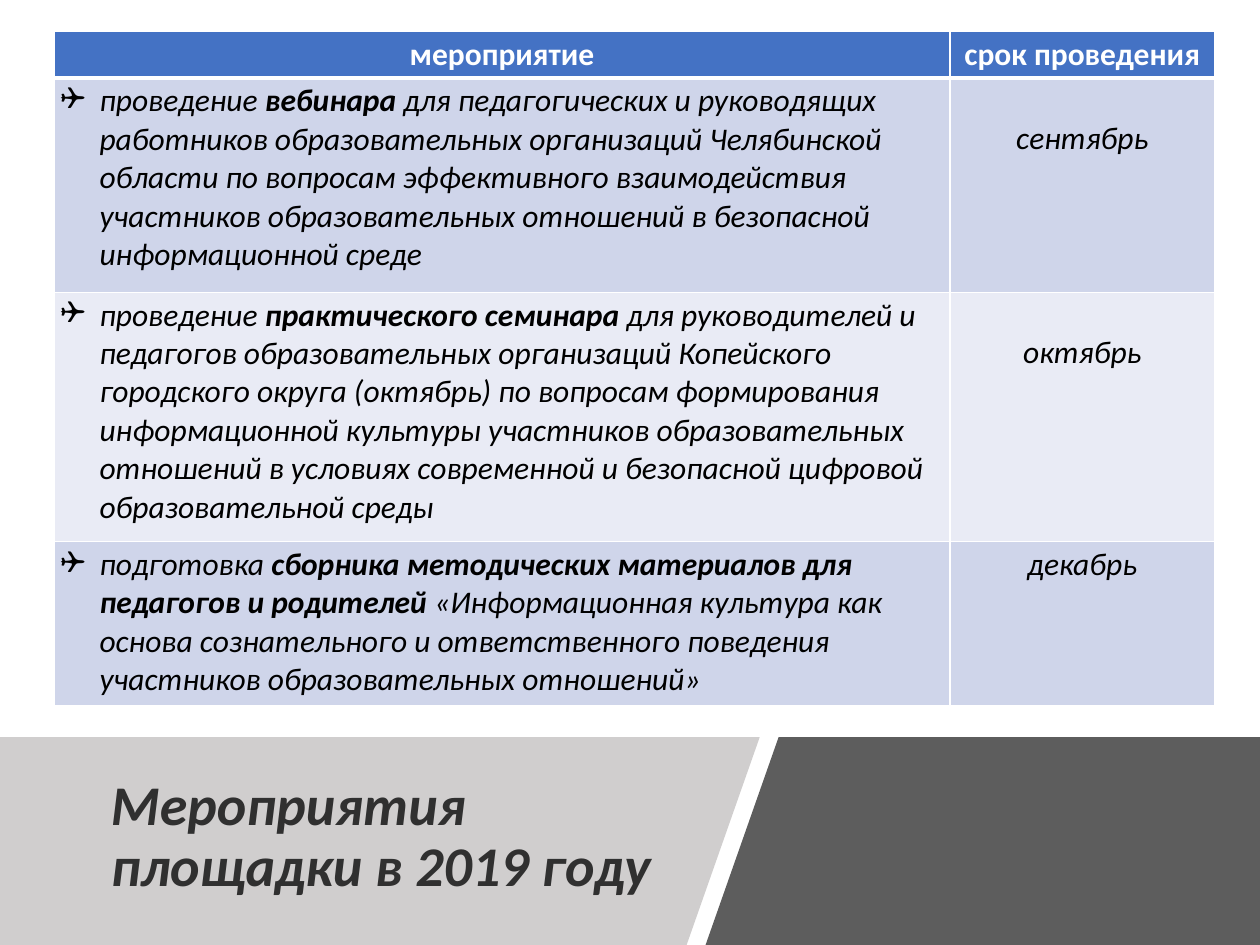
from lxml import etree
from pptx import Presentation, util as u
from pptx.dml.color import RGBColor
from pptx.enum import text
from pptx.oxml.ns import qn

HEADING = "Мероприятия площадки в 2019 году"
COLUMNS = ["мероприятие", "срок проведения"]
EVENTS = [
    (["проведение ", "вебинара",
      " для педагогических и руководящих работников образовательных организаций "
      "Челябинской области по вопросам эффективного взаимодействия участников "
      "образовательных отношений в безопасной информационной среде"],
     "сентябрь", 1),
    (["проведение ", "практического семинара",
      " для руководителей и педагогов образовательных организаций Копейского "
      "городского округа (октябрь) по вопросам формирования информационной культуры "
      "участников образовательных отношений в условиях современной и безопасной "
      "цифровой образовательной среды"],
     "октябрь", 1),
    (["подготовка ", "сборника методических материалов для педагогов и родителей ",
      "«Информационная культура как основа сознательного и ответственного поведения "
      "участников образовательных отношений»"],
     "декабрь", 0),
]
COLUMN_WIDTHS = [7.11, 2.1]
ROW_HEIGHTS = [0.37, 1.7, 1.98, 1.3]
TABLE_LEFT, TABLE_TOP = 0.43, 0.25
LINE_HEIGHT, BULLET_INDENT = 0.3, 0.31
BAND_TOP, BAND_BOTTOM = 5.85, 7.5

THEME = {
    "font": "Calibri", "heading_size": 32, "table_size": 18,
    "heading": "303030", "header": "4472C4", "bands": ["CFD5EA", "E9EBF5"],
    "ink": "000000", "white": "FFFFFF", "left_panel": "D0CECE", "right_panel": "5D5D5D",
}
PANELS = [
    ("right_panel", [(6.18, BAND_TOP), (10, BAND_TOP), (10, BAND_BOTTOM), (5.6, BAND_BOTTOM)]),
    ("left_panel", [(0, BAND_TOP), (6.03, BAND_TOP), (5.45, BAND_BOTTOM), (0, BAND_BOTTOM)]),
]


def paint(fill, color):
    fill.solid()
    fill.fore_color.rgb = RGBColor.from_string(color)


def style(font, size, color, bold=False, italic=False):
    font.name, font.size = THEME["font"], u.Pt(size)
    font.bold, font.italic = bold, italic
    font.color.rgb = RGBColor.from_string(color)


def add_panel(slide, color, corners):
    points = [(u.Inches(x), u.Inches(y)) for x, y in corners]
    outline = slide.shapes.build_freeform(*points[0])
    outline.add_line_segments(points[1:], close=True)
    panel = outline.convert_to_shape()
    panel.shadow.inherit = False
    paint(panel.fill, color)
    panel.line.fill.background()


def add_heading(slide):
    heading = slide.shapes.title
    slide.shapes.element.append(heading.element)
    heading.left, heading.top = u.Inches(0.78), u.Inches(6.05)
    heading.width, heading.height = u.Inches(4.67), u.Inches(1.2)
    frame = heading.text_frame
    frame.text = HEADING
    frame.word_wrap = True
    frame.auto_size = text.MSO_AUTO_SIZE.NONE
    frame.vertical_anchor = text.MSO_ANCHOR.MIDDLE
    paragraph = frame.paragraphs[0]
    paragraph.alignment = text.PP_ALIGN.LEFT
    paragraph.line_spacing = 0.9
    style(paragraph.runs[0].font, THEME["heading_size"], THEME["heading"], True, True)


def set_borders(cell, bottom):
    properties = cell._tc.get_or_add_tcPr()
    for side, width in (("L", 1), ("R", 1), ("T", 1), ("B", bottom)):
        line = etree.SubElement(properties, qn(f"a:ln{side}"), w=str(u.Pt(width)))
        fill = etree.SubElement(line, qn("a:solidFill"))
        etree.SubElement(fill, qn("a:srgbClr"), val=THEME["white"])


def fill_cell(cell, parts, background, color, header=False, bullet=False, lines_above=0):
    set_borders(cell, 3 if header else 1)
    paint(cell.fill, background)
    cell.margin_left = cell.margin_right = u.Inches(0.05)
    cell.margin_top = u.Inches(0.03 + lines_above * LINE_HEIGHT)
    cell.margin_bottom = u.Inches(0.03)
    paragraph = cell.text_frame.paragraphs[0]
    if bullet:
        indent = u.Inches(BULLET_INDENT)
        properties = paragraph._p.get_or_add_pPr()
        properties.set("marL", str(indent))
        properties.set("indent", str(-indent))
        etree.SubElement(properties, qn("a:buFont"), typeface="Wingdings")
        etree.SubElement(properties, qn("a:buChar"), char="❑")
    else:
        paragraph.alignment = text.PP_ALIGN.CENTER
    for position, part in enumerate(parts):
        run = paragraph.add_run()
        run.text = part
        style(run.font, THEME["table_size"], color, header or position == 1, not header)


def add_schedule(slide):
    schedule = slide.shapes.add_table(
        len(ROW_HEIGHTS), len(COLUMN_WIDTHS), u.Inches(TABLE_LEFT), u.Inches(TABLE_TOP),
        u.Inches(sum(COLUMN_WIDTHS)), u.Inches(sum(ROW_HEIGHTS))).table
    for column, width in zip(schedule.columns, COLUMN_WIDTHS):
        column.width = u.Inches(width)
    for row, height in zip(schedule.rows, ROW_HEIGHTS):
        row.height = u.Inches(height)
    for index, label in enumerate(COLUMNS):
        fill_cell(schedule.cell(0, index), [label], THEME["header"], THEME["white"], header=True)
    for index, (event, month, lines_above) in enumerate(EVENTS):
        band = THEME["bands"][index % 2]
        fill_cell(schedule.cell(index + 1, 0), event, band, THEME["ink"], bullet=True)
        fill_cell(schedule.cell(index + 1, 1), [month], band, THEME["ink"],
                  lines_above=lines_above)


def main():
    deck = Presentation()
    deck.slide_width, deck.slide_height = u.Inches(10), u.Inches(7.5)
    slide = deck.slides.add_slide(deck.slide_layouts[5])
    for color, corners in PANELS:
        add_panel(slide, THEME[color], corners)
    add_heading(slide)
    add_schedule(slide)
    deck.save("out.pptx")


if __name__ == "__main__":
    main()
